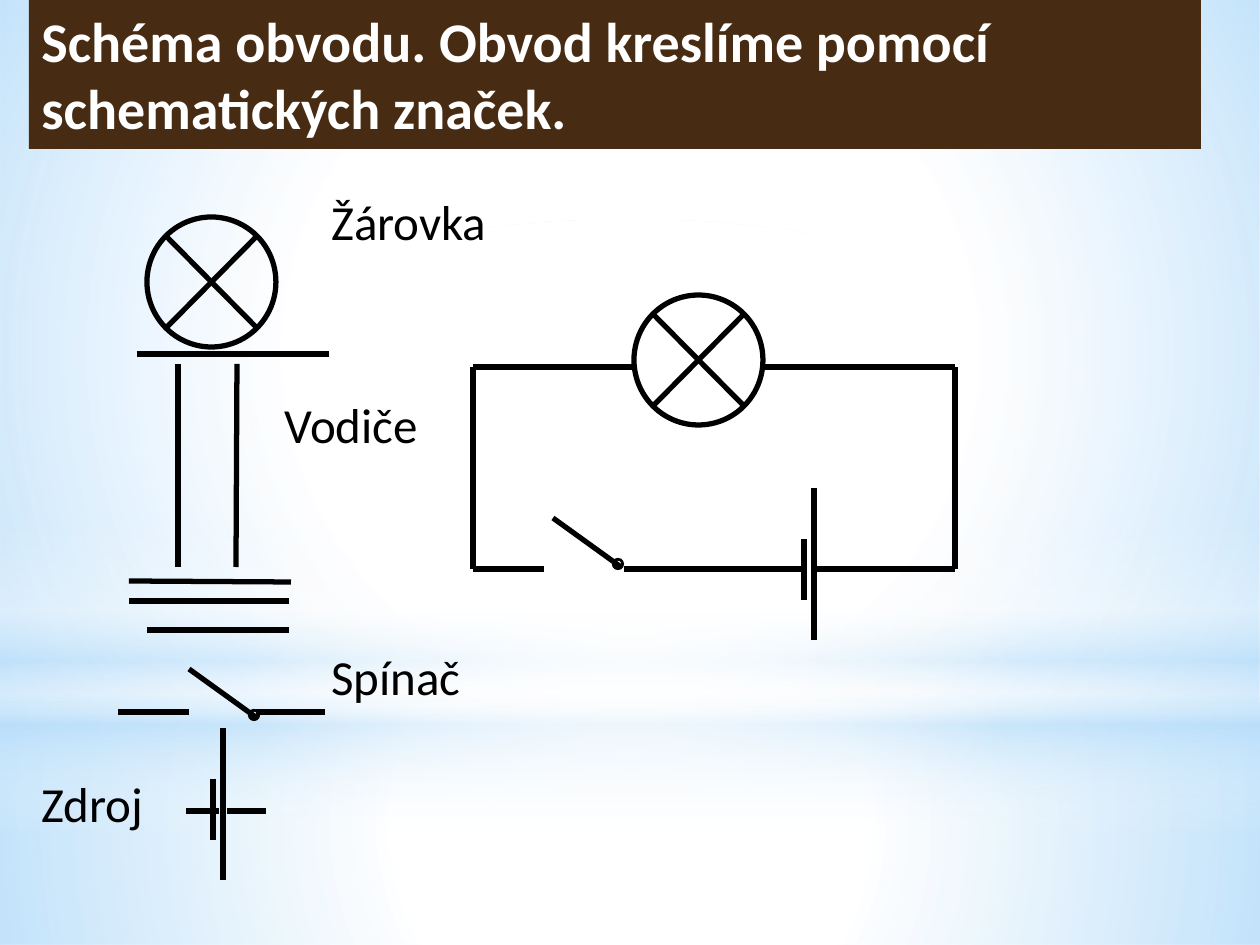
from dataclasses import dataclass

from lxml import etree
from pptx import Presentation
from pptx import util as u
from pptx.dml.color import RGBColor
from pptx.enum import shapes, text
from pptx.oxml import parse_xml
from pptx.oxml.ns import nsdecls, qn

PX_PER_INCH = 126


@dataclass(frozen=True)
class Theme:
    font: str = "Calibri"
    ink: str = "000000"
    paper: str = "FFFFFF"
    sky: str = "B4DCFA"
    band: str = "472B13"
    title_size: int = 32
    label_size: int = 28
    wire: float = 3
    plate: float = 3.5
    pivot: float = 1.25


THEME = Theme()


def px(length):
    return u.Emu(round(length * u.Inches(1) / PX_PER_INCH))


def add_shape(slide, kind, box, fill=None, line_width=None):
    shape = slide.shapes.add_shape(kind, *map(px, box))
    shape.shadow.inherit = False
    if fill:
        shape.fill.solid()
        shape.fill.fore_color.rgb = RGBColor.from_string(fill)
    else:
        shape.fill.background()
    if line_width:
        shape.line.color.rgb = RGBColor.from_string(THEME.ink)
        shape.line.width = u.Pt(line_width)
    else:
        shape.line.fill.background()
    return shape


def add_line(slide, start, end, width=THEME.wire):
    line = slide.shapes.add_connector(
        shapes.MSO_CONNECTOR.STRAIGHT, *map(px, (*start, *end)))
    line.line.color.rgb = RGBColor.from_string(THEME.ink)
    line.line.width = u.Pt(width)
    etree.SubElement(line._element.spPr, qn("a:effectLst"))
    return line


def write_text(shape, words, size=THEME.label_size, color=THEME.ink, bold=False):
    frame = shape.text_frame
    frame.word_wrap = True
    frame.auto_size = text.MSO_AUTO_SIZE.SHAPE_TO_FIT_TEXT
    frame.vertical_anchor = text.MSO_ANCHOR.TOP
    paragraph = frame.paragraphs[0]
    paragraph.alignment = text.PP_ALIGN.LEFT
    run = paragraph.add_run()
    run.text = words
    run.font.name = THEME.font
    run.font.size = u.Pt(size)
    run.font.bold = bold
    run.font.color.rgb = RGBColor.from_string(color)


def set_gradient(shape, stops, linear=False):
    """Stops are (position, colour, opacity), both numbers in percent."""
    stop_xml = "".join(
        f'<a:gs pos="{position * 1000}"><a:srgbClr val="{color}">'
        f'<a:alpha val="{opacity * 1000}"/></a:srgbClr></a:gs>'
        for position, color, opacity in stops)
    if linear:
        direction = '<a:lin ang="5400000" scaled="0"/>'
    else:
        direction = ('<a:path path="circle"><a:fillToRect l="50000" t="50000" '
                     'r="50000" b="50000"/></a:path>')
    gradient = parse_xml(f'<a:gradFill {nsdecls("a")} rotWithShape="1">'
                         f"<a:gsLst>{stop_xml}</a:gsLst>{direction}</a:gradFill>")
    properties = shape._element.spPr
    properties.replace(properties.find(qn("a:noFill")), gradient)


def draw_background(slide, box):
    left, top, width, height = box
    horizon = 703
    white, sky = THEME.paper, THEME.sky
    rectangle, oval = shapes.MSO_SHAPE.RECTANGLE, shapes.MSO_SHAPE.OVAL
    layers = [
        (rectangle, horizon, height - horizon,
         [(0, white, 91), (37, white, 76), (100, sky, 79)], False),
        (rectangle, 0, horizon,
         [(0, white, 89), (48, white, 62), (100, sky, 79)], False),
        (rectangle, 519, 315,
         [(0, white, 0), (29, white, 30), (45, sky, 40), (55, white, 26),
          (65, sky, 60), (100, white, 0)], True),
        (oval, 220, horizon, [(0, white, 100), (56, white, 0)], False),
    ]
    for kind, offset, depth, stops, linear in layers:
        layer = add_shape(slide, kind, (left, top + offset, width, depth))
        set_gradient(layer, stops, linear)


def draw_title(slide, box):
    band = add_shape(slide, shapes.MSO_SHAPE.RECTANGLE, box, fill=THEME.band)
    write_text(band, "Schéma obvodu. Obvod kreslíme pomocí schematických značek.",
               size=THEME.title_size, color=THEME.paper, bold=True)


def draw_bulb(slide, left, top):
    width, height, inset = 129, 130, 19
    add_shape(slide, shapes.MSO_SHAPE.OVAL, (left, top, width, height),
              line_width=THEME.wire)
    x1, x2 = left + inset, left + width - inset
    y1, y2 = top + inset, top + height - inset
    add_line(slide, (x2, y1), (x1, y2))
    add_line(slide, (x1, y1), (x2, y2))


def draw_switch(slide, left, top):
    pivot = add_shape(slide, shapes.MSO_SHAPE.DONUT, (left + 60, top + 41, 10, 10),
                      line_width=THEME.pivot)
    pivot.adjustments[0] = 0.055
    add_line(slide, (left, top), (left + 68, top + 49))


def draw_cell(slide, left, top):
    add_line(slide, (left + 10, top + 152), (left + 10, top), THEME.plate)
    add_line(slide, (left, top + 112), (left, top + 51), THEME.plate)


def draw_symbols(slide, box):
    left, top = box[:2]

    def wire(x1, y1, x2, y2):
        add_line(slide, (left + x1, top + y1), (left + x2, top + y2))

    # Bulb
    draw_bulb(slide, left + 118, top + 69)

    # Conductors, vertical and horizontal
    wire(108, 206, 300, 206)
    wire(149, 419, 149, 216)
    wire(207, 419, 208, 216)
    wire(100, 433, 262, 434)
    wire(100, 453, 260, 453)
    wire(118, 482, 260, 482)

    # Switch with its leads
    draw_switch(slide, left + 160, top + 521)
    wire(160, 564, 89, 564)
    wire(296, 564, 227, 564)

    # Source with its leads
    draw_cell(slide, left + 184, top + 580)
    wire(198, 663, 237, 663)
    wire(157, 663, 190, 663)

    # Names of the symbols
    for words, x, y, width in [("Žárovka", 290, 37, 252), ("Vodiče", 243, 240, 173),
                               ("Spínač", 290, 492, 200), ("Zdroj", 0, 619, 174)]:
        label = slide.shapes.add_textbox(
            *map(px, (left + x, top + y, width, 72)))
        write_text(label, words)


def draw_circuit(slide, box):
    left, top, width, height = box
    right = left + width
    upper, lower = top + 72, top + 274
    bulb_left, cell_left = left + 161, left + 331

    draw_bulb(slide, bulb_left, top)
    draw_switch(slide, left + 80, top + 223)
    draw_cell(slide, cell_left, top + height - 152)

    # Wires around the loop
    for start, end in [((bulb_left + 129, upper), (right, upper)),
                       ((left, upper), (bulb_left, upper)),
                       ((left, lower), (left, upper)),
                       ((right, lower), (right, upper)),
                       ((left + 71, lower), (left, lower)),
                       ((cell_left, lower), (left + 151, lower)),
                       ((cell_left + 10, lower), (right, lower))]:
        add_line(slide, start, end)


def main():
    presentation = Presentation()
    presentation.slide_width, presentation.slide_height = px(1260), px(945)
    slide = presentation.slides.add_slide(presentation.slide_layouts[6])
    draw_background(slide, (0, 0, 1260, 945))
    draw_title(slide, (29, 0, 1172, 149))
    draw_symbols(slide, (29, 148, 420, 733))
    draw_circuit(slide, (473, 295, 482, 345))
    presentation.save("out.pptx")


if __name__ == "__main__":
    main()
